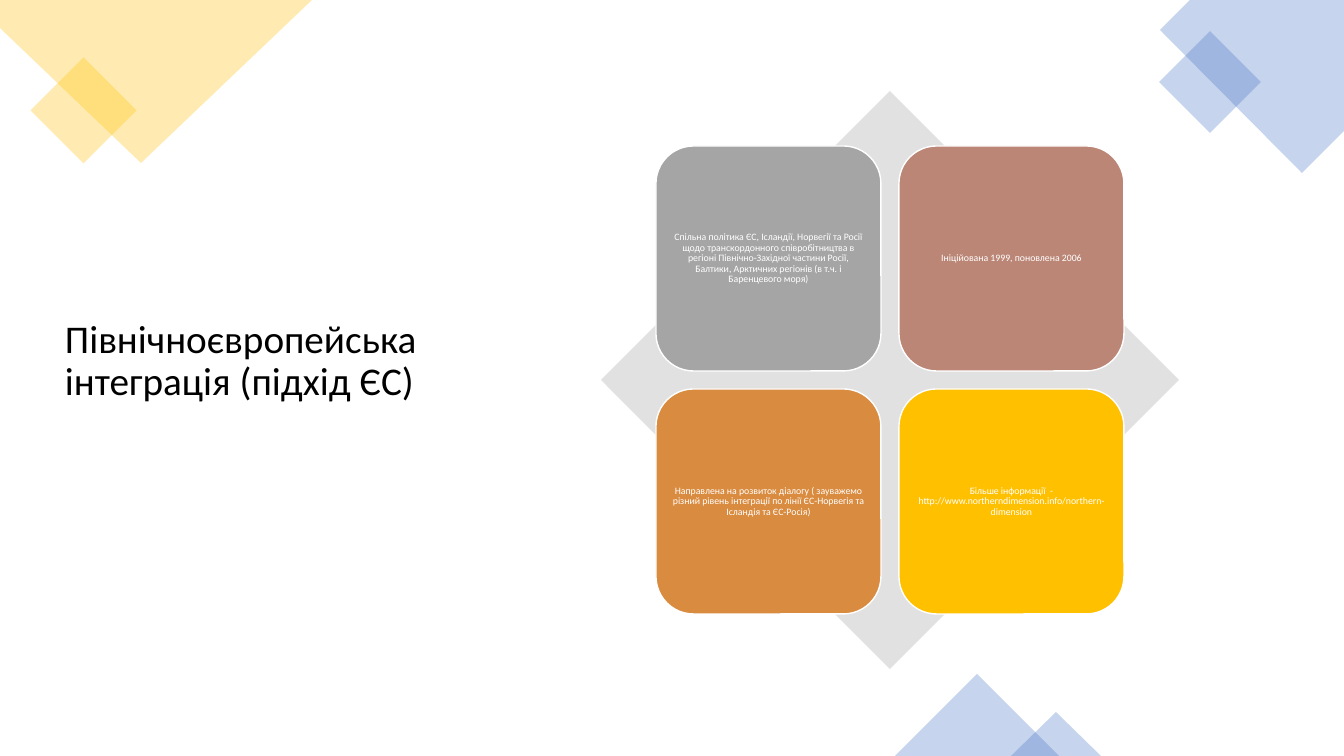
from dataclasses import dataclass

from lxml.etree import SubElement
from pptx import Presentation
from pptx.dml.color import RGBColor
from pptx.enum.shapes import MSO_SHAPE
from pptx.enum.text import MSO_ANCHOR, PP_ALIGN
from pptx.oxml.ns import qn
from pptx.util import Emu, Pt

# Content
TITLE = "Північноєвропейська інтеграція (підхід ЄС)"
CARDS = [
    ("Спільна політика ЄС, Ісландії, Норвегії та Росії щодо транскордонного "
     "співробітництва в регіоні Північно-Західної частини Росії, Балтики, "
     "Арктичних регіонів (в т.ч. і Баренцевого моря)", "A5A5A5"),
    ("Ініційована 1999, поновлена 2006", "BB8676"),
    ("Направлена на розвиток діалогу ( зауважемо різний рівень інтеграції "
     "по лінії ЄС-Норвегія та Ісландія та ЄС-Росія)", "D98B3F"),
    ("Більше інформації  - http://www.northerndimension.info/northern-dimension",
     "FFC000"),
]


@dataclass(frozen=True)
class Theme:
    font: str = "Calibri"
    yellow: str = "FFC000"
    blue: str = "4472C4"
    backdrop: str = "E1E1E1"
    white: str = "FFFFFF"
    black: str = "000000"
    decor_opacity: int = 30
    title_size: int = 28
    card_size: int = 7


THEME = Theme()

# Layout in px
PAGE = (1344, 756)
EMU_PER_PX = 12192000 / PAGE[0]
TITLE_BOX = (55, 75, 398, 574)
BACKDROP = (601, 91, 578, 578)
CARD_SIZE, CARD_GAP, CARD_INSET = 225, 18, 3
CARD_COLUMNS = 2

# Corner decorations: polygons by vertices, presets by box and rotation
POLYGONS = [
    ([(0, 0), (312, 0), (141, 163), (0, 28)], THEME.yellow),
    ([(1190, 0), (1344, 0), (1344, 131), (1302, 173), (1160, 30)], THEME.blue),
]
PRESETS = [
    (MSO_SHAPE.RECTANGLE, (46, 73, 75, 75), 45, THEME.yellow),
    (MSO_SHAPE.RECTANGLE, (1174, 46, 72, 72), 45, THEME.blue),
    (MSO_SHAPE.ISOSCELES_TRIANGLE, (895, 674, 164, 82), 0, THEME.blue),
    (MSO_SHAPE.ISOSCELES_TRIANGLE, (1011, 712, 90, 44), 0, THEME.blue),
]


def px(length):
    return Emu(round(length * EMU_PER_PX))


def paint(shape, color, opacity=100):
    shape.shadow.inherit = False
    shape.line.fill.background()
    shape.fill.solid()
    shape.fill.fore_color.rgb = RGBColor.from_string(color)
    if opacity < 100:
        color_node = shape.fill._xPr.find(".//" + qn("a:srgbClr"))
        SubElement(color_node, qn("a:alpha")).set("val", str(opacity * 1000))


def add_preset(page, kind, box, color, opacity=100):
    shape = page.shapes.add_shape(kind, *map(px, box))
    paint(shape, color, opacity)
    return shape


def write(shape, text, size, color, align):
    frame = shape.text_frame
    frame.word_wrap = True
    frame.vertical_anchor = MSO_ANCHOR.MIDDLE
    para = frame.paragraphs[0]
    para.alignment = align
    para.line_spacing = 0.9
    span = para.add_run()
    span.text = text
    span.font.name = THEME.font
    span.font.size = Pt(size)
    span.font.color.rgb = RGBColor.from_string(color)
    return frame


def add_decorations(page):
    for points, color in POLYGONS:
        builder = page.shapes.build_freeform(*points[0], scale=EMU_PER_PX)
        builder.add_line_segments(points[1:], close=True)
        paint(builder.convert_to_shape(), color, THEME.decor_opacity)
    for kind, box, rotation, color in PRESETS:
        shape = add_preset(page, kind, box, color, THEME.decor_opacity)
        shape.rotation = rotation


def add_matrix(page):
    add_preset(page, MSO_SHAPE.DIAMOND, BACKDROP, THEME.backdrop)
    # Cards are centred on the diamond
    left, top, side, _ = BACKDROP
    pitch = CARD_SIZE + CARD_GAP
    margin = (side - CARD_SIZE - pitch) // 2
    for index, (text, color) in enumerate(CARDS):
        row, column = divmod(index, CARD_COLUMNS)
        box = (left + margin + column * pitch, top + margin + row * pitch,
               CARD_SIZE, CARD_SIZE)
        card = add_preset(page, MSO_SHAPE.ROUNDED_RECTANGLE, box, color)
        card.line.color.rgb = RGBColor.from_string(THEME.white)
        card.line.width = Pt(1)
        frame = write(card, text, THEME.card_size, THEME.white, PP_ALIGN.CENTER)
        frame.margin_left = frame.margin_right = px(CARD_INSET)
        frame.margin_top = frame.margin_bottom = px(CARD_INSET)


def main():
    deck = Presentation()
    deck.slide_width, deck.slide_height = map(px, PAGE)
    page = deck.slides.add_slide(deck.slide_layouts[6])
    add_decorations(page)
    title = page.shapes.add_textbox(*map(px, TITLE_BOX))
    write(title, TITLE, THEME.title_size, THEME.black, PP_ALIGN.LEFT)
    add_matrix(page)
    deck.save("out.pptx")


if __name__ == "__main__":
    main()
